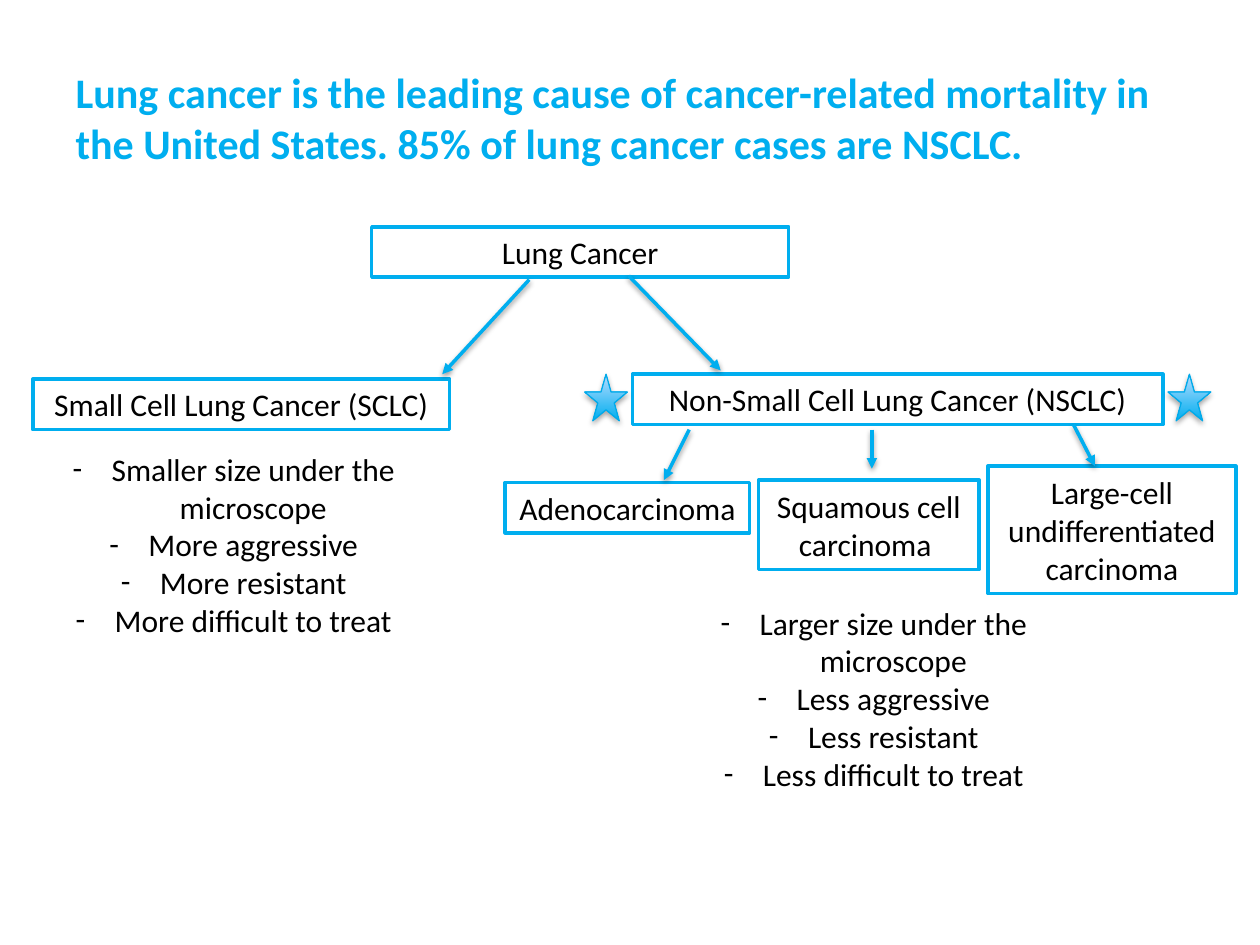
from lxml import etree
from pptx import Presentation
from pptx.dml.color import RGBColor
from pptx.enum.shapes import MSO_CONNECTOR, MSO_SHAPE
from pptx.enum.text import MSO_ANCHOR, MSO_AUTO_SIZE, PP_ALIGN
from pptx.oxml.ns import qn
from pptx.util import Emu, Pt

EMU_PER_PX = 9144  # 100 px to the inch
TWO_CONTENT_LAYOUT = 3
FONT = "Calibri"
BLUE, PALE_BLUE, STAR_EDGE = "00AEEF", "B5DCFF", "00AAEA"
BLACK, WHITE = "000000", "FFFFFF"
CENTER = PP_ALIGN.CENTER
TOP, MIDDLE = MSO_ANCHOR.TOP, MSO_ANCHOR.MIDDLE
NO_AUTOFIT = MSO_AUTO_SIZE.NONE
RECTANGLE, STAR = MSO_SHAPE.RECTANGLE, MSO_SHAPE.STAR_5_POINT
STRAIGHT = MSO_CONNECTOR.STRAIGHT

TITLE = ("Lung cancer is the leading cause of cancer-related mortality in "
         "the United States. 85% of lung cancer cases are NSCLC.")
SCLC_TRAITS = ["Smaller size under the microscope", "More aggressive",
               "More resistant", "More difficult to treat"]
NSCLC_TRAITS = ["Larger size under the microscope", "Less aggressive",
                "Less resistant", "Less difficult to treat"]
BOXES = [
    ("Lung Cancer", 295, 180, 331, 40),
    ("Small Cell Lung Cancer (SCLC)", 26, 301, 331, 40),
    ("Non-Small Cell Lung Cancer (NSCLC)", 502, 297, 421, 40),
    ("Adenocarcinoma ", 401, 383, 194, 40),
    ("Squamous cell carcinoma ", 602, 381, 175, 71),
    ("Large-cell undifferentiated carcinoma", 784, 370, 197, 101),
]
ARROWS = [
    (420, 222, 351, 297),
    (499, 219, 572, 294),
    (547, 341, 527, 381),
    (692, 341, 692, 372),
    (852, 337, 869, 370),
]
STAR_LEFTS = [464, 927]


def px(*lengths):
    return [Emu(length * EMU_PER_PX) for length in lengths]


def color(hex_value):
    return RGBColor.from_string(hex_value)


def write(paragraph, text, size=18, hex_value=BLACK, bold=False):
    run = paragraph.add_run()
    run.text = text
    run.font.name = FONT
    run.font.size = Pt(size)
    run.font.bold = bold
    run.font.color.rgb = color(hex_value)


def place(shape, left, top, width, height):
    shape.left, shape.top, shape.width, shape.height = px(left, top, width, height)


def prepare_frame(shape, anchor):
    frame = shape.text_frame
    frame.word_wrap = True
    frame.auto_size = NO_AUTOFIT
    frame.vertical_anchor = anchor
    return frame


def add_dash(paragraph):
    """Give the paragraph a hanging dash bullet."""
    properties = paragraph._p.get_or_add_pPr()
    indent, = px(31)
    properties.set("marL", str(indent))
    properties.set("indent", str(-indent))
    etree.SubElement(properties, qn("a:buFont"), typeface=FONT)
    etree.SubElement(properties, qn("a:buChar"), char="-")


def add_shadow(shape, opacity, distance):
    """Cast a soft shadow straight down; opacity in percent, distance in points."""
    effects = etree.SubElement(shape._element.spPr, qn("a:effectLst"))
    shadow = etree.SubElement(effects, qn("a:outerShdw"), blurRad=str(Pt(3.1)),
                              dist=str(Pt(distance)), dir="5400000", rotWithShape="0")
    shade = etree.SubElement(shadow, qn("a:srgbClr"), val=BLACK)
    etree.SubElement(shade, qn("a:alpha"), val=str(opacity * 1000))


def fill_title(placeholder):
    place(placeholder, 50, 48, 900, 68)
    paragraph = prepare_frame(placeholder, TOP).paragraphs[0]
    paragraph.alignment = PP_ALIGN.LEFT
    write(paragraph, TITLE, 24, BLUE, bold=True)


def fill_list(placeholder, items, left, top):
    place(placeholder, left, top, 331, 162)
    frame = prepare_frame(placeholder, TOP)
    for index, item in enumerate(items):
        paragraph = frame.add_paragraph() if index else frame.paragraphs[0]
        add_dash(paragraph)
        paragraph.alignment = CENTER
        paragraph.space_before = Pt(0)
        write(paragraph, item)


def add_box(slide, text, *bounds):
    box = slide.shapes.add_shape(RECTANGLE, *px(*bounds))
    box.shadow.inherit = False
    box.fill.solid()
    box.fill.fore_color.rgb = color(WHITE)
    box.line.color.rgb = color(BLUE)
    box.line.width = Pt(2)
    paragraph = prepare_frame(box, MIDDLE).paragraphs[0]
    paragraph.alignment = CENTER
    write(paragraph, text)


def add_arrow(slide, *ends):
    arrow = slide.shapes.add_connector(STRAIGHT, *px(*ends))
    arrow.line.color.rgb = color(BLUE)
    arrow.line.width = Pt(2)
    line = arrow._element.spPr.find(qn("a:ln"))
    etree.SubElement(line, qn("a:tailEnd"), type="triangle")
    add_shadow(arrow, 38, 1.6)


def add_star(slide, left):
    star = slide.shapes.add_shape(STAR, *px(left, 297, 34, 37))
    star.fill.gradient()
    star.fill.gradient_angle = 90
    for stop, hex_value in zip(star.fill.gradient_stops, (BLUE, PALE_BLUE)):
        stop.color.rgb = color(hex_value)
    star.line.color.rgb = color(STAR_EDGE)
    star.line.width = Pt(0.75)
    add_shadow(star, 35, 1.8)


def main():
    presentation = Presentation()
    presentation.slide_width, presentation.slide_height = px(1000, 750)
    layout = presentation.slide_layouts[TWO_CONTENT_LAYOUT]
    slide = presentation.slides.add_slide(layout)

    fill_title(slide.shapes.title)
    fill_list(slide.placeholders[1], SCLC_TRAITS, 20, 352)
    fill_list(slide.placeholders[2], NSCLC_TRAITS, 528, 474)
    for box in BOXES:
        add_box(slide, *box)
    for arrow in ARROWS:
        add_arrow(slide, *arrow)
    for left in STAR_LEFTS:
        add_star(slide, left)

    presentation.save("out.pptx")


if __name__ == "__main__":
    main()
